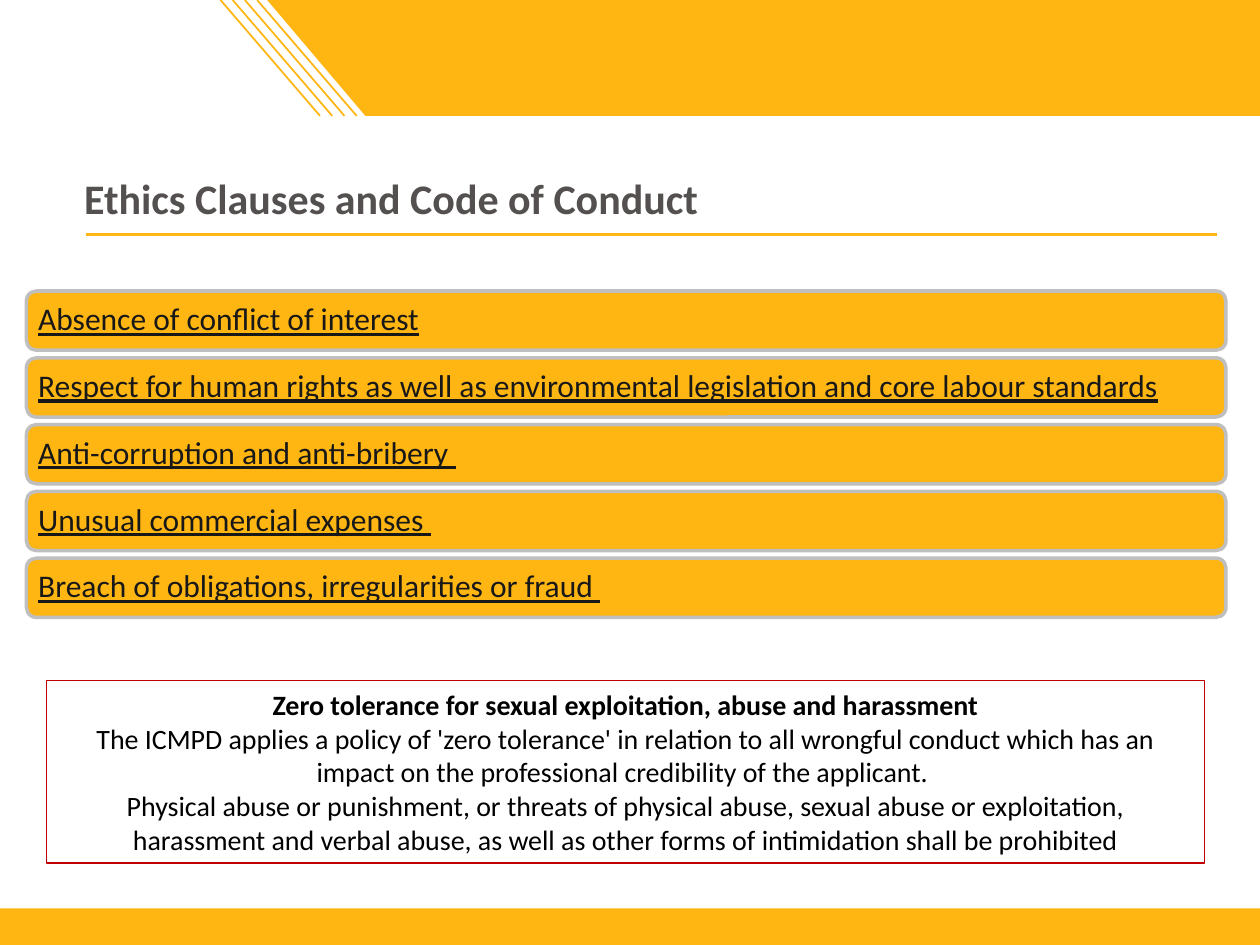
import pptx
import pptx.dml.color
import pptx.enum.shapes
import pptx.enum.text
import pptx.oxml.ns
import pptx.util
from lxml import etree
from pptx.util import Inches

TITLE = "Ethics Clauses and Code of Conduct"
CLAUSES = [
    "Absence of conflict of interest",
    "Respect for human rights as well as environmental legislation and core labour standards",
    "Anti-corruption and anti-bribery ",
    "Unusual commercial expenses ",
    "Breach of obligations, irregularities or fraud ",
]
POLICY = [
    "Zero tolerance for sexual exploitation, abuse and harassment",
    "The ICMPD applies a policy of 'zero tolerance' in relation to all wrongful conduct "
    "which has an impact on the professional credibility of the applicant. ",
    "Physical abuse or punishment, or threats of physical abuse, sexual abuse or exploitation, "
    "harassment and verbal abuse, as well as other forms of intimidation shall be prohibited",
]
THEME = {
    "font": "Calibri",
    "amber": "FFB612", "title": "53504F", "clause": "181818",
    "bar edge": "BFBFBF", "policy": "000000", "policy edge": "C00000",
    "title size": 24, "clause size": 18, "policy size": 16,
}
SHAPES = pptx.enum.shapes.MSO_SHAPE
ANCHOR = pptx.enum.text.MSO_ANCHOR
ALIGN = pptx.enum.text.PP_ALIGN

WIDTH, HEIGHT = 10, 7.5
BANNER_HEIGHT, BANNER_SLANT = 0.92, 0.79
BAR_TOP, BAR_HEIGHT, BAR_PITCH = 2.31, 0.47, 0.53


def color(name):
    return pptx.dml.color.RGBColor.from_string(THEME[name])


def paint(shape, fill=None, edge=None, weight=1):
    shape.shadow.inherit = False
    if fill:
        shape.fill.solid()
        shape.fill.fore_color.rgb = color(fill)
    else:
        shape.fill.background()
    if edge:
        shape.line.color.rgb = color(edge)
        shape.line.width = pptx.util.Pt(weight)
    else:
        shape.line.fill.background()


def add_box(slide, kind, left, top, width, height):
    return slide.shapes.add_shape(
        kind, Inches(left), Inches(top), Inches(width), Inches(height))


def add_line(slide, start, end, weight):
    line = slide.shapes.add_connector(
        pptx.enum.shapes.MSO_CONNECTOR.STRAIGHT, *map(Inches, start + end))
    line.line.color.rgb = color("amber")
    line.line.width = pptx.util.Pt(weight)
    etree.SubElement(line._element.spPr, pptx.oxml.ns.qn("a:effectLst"))


def write(shape, texts, role, anchor, align, inset=0.1):
    frame = shape.text_frame
    frame.word_wrap = True
    frame.vertical_anchor = anchor
    frame.margin_left = frame.margin_right = Inches(inset)
    frame.margin_top = frame.margin_bottom = Inches(0.05)
    frame.text = "\n".join(texts)
    for paragraph in frame.paragraphs:
        paragraph.alignment = align
        paragraph.font.name = THEME["font"]
        paragraph.font.size = pptx.util.Pt(THEME[role + " size"])
        paragraph.font.color.rgb = color(role)
    return frame.paragraphs


def add_frame(slide):
    # Slanted banner with its stripes
    builder = slide.shapes.build_freeform(Inches(2.12), 0)
    corners = [(WIDTH, 0), (WIDTH, BANNER_HEIGHT), (2.9, BANNER_HEIGHT)]
    builder.add_line_segments([(Inches(x), Inches(y)) for x, y in corners], close=True)
    paint(builder.convert_to_shape(), "amber")
    for index in range(4):
        left = 1.75 + index * 0.097
        add_line(slide, (left, 0), (left + BANNER_SLANT, BANNER_HEIGHT), 1)

    # Footer band and title rule
    footer_top = 7.21
    paint(add_box(slide, SHAPES.RECTANGLE, 0, footer_top, WIDTH, HEIGHT - footer_top), "amber")
    add_line(slide, (0.68, 1.86), (9.66, 1.86), 1.5)


def add_content(slide):
    # Title
    title = slide.shapes.add_textbox(Inches(0.57), Inches(0.99), Inches(9.15), Inches(0.83))
    write(title, [TITLE], "title", ANCHOR.BOTTOM, ALIGN.LEFT)[0].font.bold = True

    # Clause bars
    for index, clause in enumerate(CLAUSES):
        bar = add_box(slide, SHAPES.ROUNDED_RECTANGLE,
                      0.21, BAR_TOP + index * BAR_PITCH, 9.52, BAR_HEIGHT)
        paint(bar, "amber", "bar edge", 2)
        paragraph = write(bar, [clause], "clause", ANCHOR.MIDDLE, ALIGN.LEFT, 0.07)[0]
        paragraph.font.underline = True
        paragraph.line_spacing = 0.9

    # Policy statement
    policy = add_box(slide, SHAPES.RECTANGLE, 0.37, 5.4, 9.19, 1.45)
    paint(policy, edge="policy edge", weight=0.75)
    write(policy, POLICY, "policy", ANCHOR.MIDDLE, ALIGN.CENTER)[0].font.bold = True


def main():
    presentation = pptx.Presentation()
    presentation.slide_width = Inches(WIDTH)
    presentation.slide_height = Inches(HEIGHT)
    slide = presentation.slides.add_slide(presentation.slide_layouts[6])
    add_frame(slide)
    add_content(slide)
    presentation.save("out.pptx")


if __name__ == "__main__":
    main()
